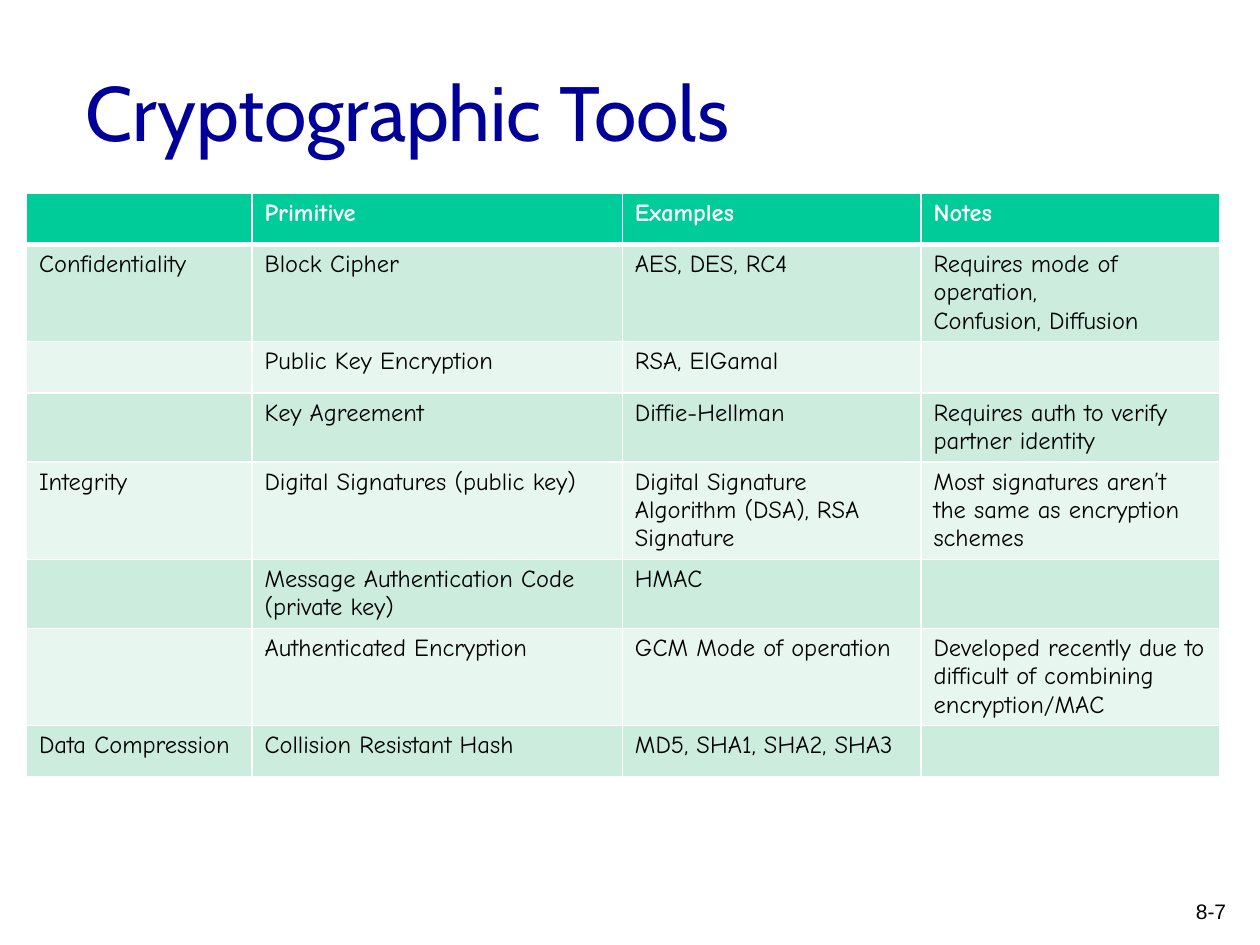
from lxml.etree import SubElement
from pptx import Presentation
from pptx.dml.color import RGBColor
from pptx.enum.text import MSO_ANCHOR, PP_ALIGN
from pptx.oxml.ns import qn
from pptx.util import Inches, Pt

NAVY = RGBColor(0x00, 0x00, 0x99)
GREEN = RGBColor(0x00, 0xCC, 0x99)
BANDS = [RGBColor(0xE7, 0xF6, 0xEF), RGBColor(0xCC, 0xEC, 0xDE)]
WHITE = RGBColor(0xFF, 0xFF, 0xFF)
BLACK = RGBColor(0x00, 0x00, 0x00)

COLUMN_WIDTHS = [1.79, 2.94, 2.37, 2.37]
ROW_HEIGHT = 0.41
ROWS = [
    ["", "Primitive", "Examples", "Notes"],
    ["Confidentiality", "Block Cipher", "AES, DES, RC4",
     "Requires mode of operation, \vConfusion, Diffusion"],
    ["", "Public Key Encryption", "RSA, ElGamal", ""],
    ["", "Key Agreement", "Diffie-Hellman",
     "Requires auth to verify partner identity"],
    ["Integrity", "Digital Signatures (public key)",
     "Digital Signature Algorithm (DSA), RSA Signature",
     "Most signatures aren’t the same as encryption schemes"],
    ["", "Message Authentication Code (private key)", "HMAC", ""],
    ["", "Authenticated Encryption", "GCM Mode of operation",
     "Developed recently due to difficult of combining encryption/MAC"],
    ["Data Compression", "Collision Resistant Hash", "MD5, SHA1, SHA2, SHA3", ""],
]


def set_font(paragraph, name, size, color, bold=False):
    font = paragraph.font
    font.name, font.size, font.bold = name, Pt(size), bold
    font.color.rgb = color


def add_border(cell, side, points):
    line = SubElement(cell._tc.get_or_add_tcPr(), qn(f"a:ln{side}"), w=str(Pt(points)))
    fill = SubElement(line, qn("a:solidFill"))
    SubElement(fill, qn("a:srgbClr"), val=str(WHITE))


deck = Presentation()
deck.slide_width, deck.slide_height = Inches(10), Inches(7.5)
page = deck.slides.add_slide(deck.slide_layouts.get_by_name("Title Only"))

title = page.shapes.title
title.left, title.top = Inches(0.58), Inches(0.25)
title.width, title.height = Inches(8.5), Inches(1.25)
title.text_frame.text = "Cryptographic Tools"
title.text_frame.vertical_anchor = MSO_ANCHOR.MIDDLE
heading = title.text_frame.paragraphs[0]
heading.alignment = PP_ALIGN.LEFT
set_font(heading, "Cabin", 44, NAVY)

table = page.shapes.add_table(
    len(ROWS), len(COLUMN_WIDTHS), Inches(0.21), Inches(1.53),
    Inches(sum(COLUMN_WIDTHS)), Inches(ROW_HEIGHT * len(ROWS))).table
for column, width in zip(table.columns, COLUMN_WIDTHS):
    column.width = Inches(width)

for row_number, texts in enumerate(ROWS):
    is_header = row_number == 0
    table.rows[row_number].height = Inches(ROW_HEIGHT)
    for column_number, text in enumerate(texts):
        cell = table.cell(row_number, column_number)
        cell.text = text
        for side in "LRTB":
            thick = (is_header and side == "B") or (row_number == 1 and side == "T")
            add_border(cell, side, 3 if thick else 1)
        cell.fill.solid()
        cell.fill.fore_color.rgb = GREEN if is_header else BANDS[row_number % 2]
        set_font(cell.text_frame.paragraphs[0], "Comic Neue", 14,
                 WHITE if is_header else BLACK, bold=is_header)

number_box = page.shapes.add_textbox(Inches(9.09), Inches(7.08), Inches(0.74), Inches(0.33))
number_box.text_frame.word_wrap = True
number_box.text_frame.text = "8-7"
page_number = number_box.text_frame.paragraphs[0]
page_number.alignment = PP_ALIGN.RIGHT
set_font(page_number, "Arial", 12, BLACK)

deck.save("out.pptx")
